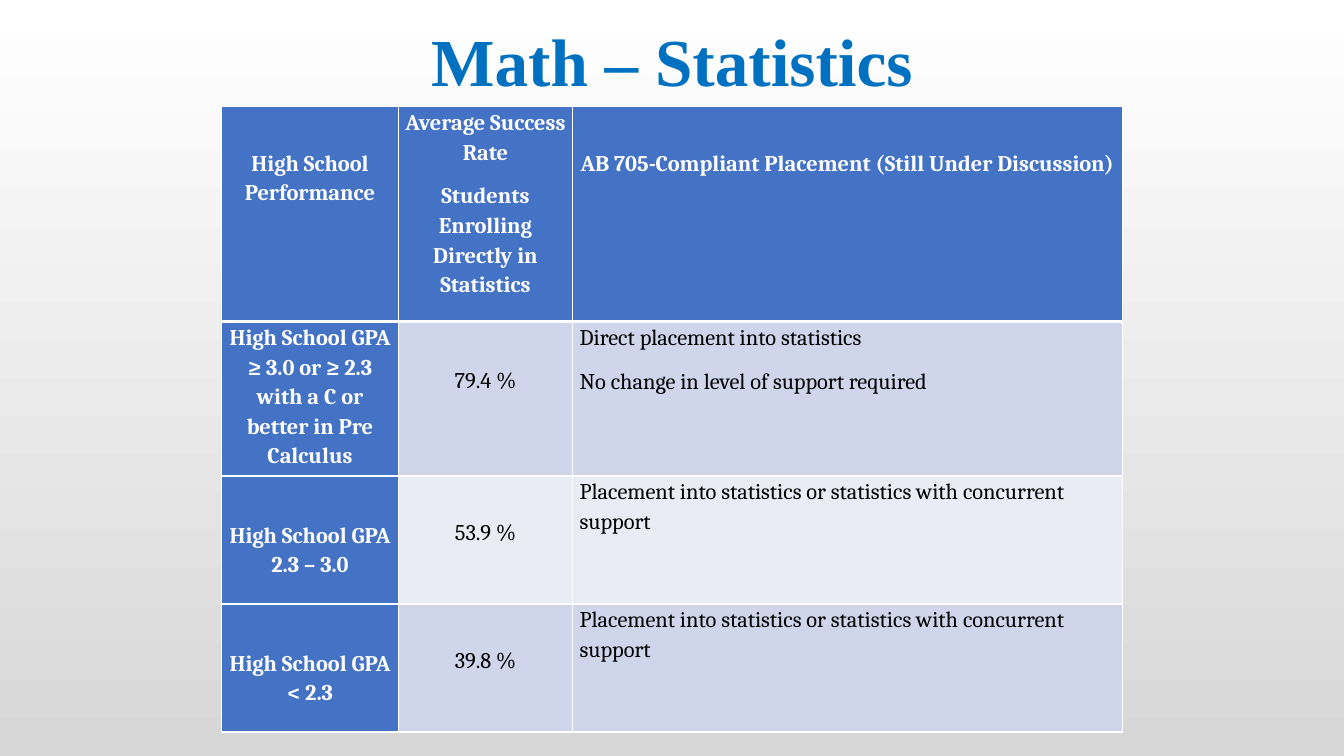
from lxml import etree
from pptx import Presentation
from pptx import util as u
from pptx.dml.color import RGBColor
from pptx.enum import text
from pptx.oxml.ns import qn

COLORS = {
    "white": "FFFFFF", "black": "000000", "gray": "D7D7D7",
    "title": "0070C0", "header": "4472C4",
    "band_dark": "CFD5EA", "band_light": "E9EBF5",
}
CENTER, LEFT = text.PP_ALIGN.CENTER, text.PP_ALIGN.LEFT


def rgb(name):
    return RGBColor.from_string(COLORS[name])


class SlideBuilder:
    """Holds the style and the current slide."""
    title_font, body_font = "Times New Roman", "Cambria"
    title_size, body_size = 48, 16

    def __init__(self, prs):
        self.s = prs.slides.add_slide(prs.slide_layouts[6])

    def background(self, top, bottom):
        fill = self.s.background.fill
        fill.gradient()
        fill.gradient_angle = 270
        for stop, color in zip(fill.gradient_stops, (top, bottom)):
            stop.color.rgb = rgb(color)

    def run(self, p, words, font, size, color, bold):
        r = p.add_run()
        r.text = words
        r.font.name, r.font.size, r.font.bold = font, u.Pt(size), bold
        r.font.color.rgb = rgb(color)

    def title(self, words, left, top, width, height):
        sp = self.s.shapes.add_textbox(*map(u.Inches, (left, top, width, height)))
        tf = sp.text_frame
        tf.word_wrap = True
        tf.vertical_anchor = text.MSO_ANCHOR.MIDDLE
        p = tf.paragraphs[0]
        p.alignment, p.line_spacing = CENTER, 0.9
        self.run(p, words, self.title_font, self.title_size, "title", True)

    def borders(self, cell, **widths):
        tcPr = cell._tc.get_or_add_tcPr()
        for side in "LRTB":
            ln = etree.SubElement(tcPr, qn(f"a:ln{side}"), w=str(u.Pt(widths.get(side, 1))))
            fill = etree.SubElement(ln, qn("a:solidFill"))
            etree.SubElement(fill, qn("a:srgbClr"), val=COLORS["white"])

    def cell(self, cell, lines, drop, fill, align, heading):
        cell.margin_left = cell.margin_right = u.Inches(0.07)
        cell.margin_top, cell.margin_bottom = u.Inches(drop), 0
        cell.fill.solid()
        cell.fill.fore_color.rgb = rgb(fill)
        tf = cell.text_frame
        for i, line in enumerate(lines):
            p = tf.add_paragraph() if i else tf.paragraphs[0]
            p.alignment, p.line_spacing, p.space_after = align, 1.15, u.Pt(10)
            self.run(p, line, self.body_font, self.body_size,
                     "white" if heading else "black", heading)

    def table(self, rows, left, top, widths, heights):
        size = (left, top, sum(widths), sum(heights))
        table = self.s.shapes.add_table(len(rows), len(widths), *map(u.Inches, size)).table
        for col, width in zip(table.columns, widths):
            col.width = u.Inches(width)
        for row, height in zip(table.rows, heights):
            row.height = u.Inches(height)
        for i, row in enumerate(rows):
            for j, (drop, *lines) in enumerate(row):
                heading = i == 0 or j == 0
                band = "band_dark" if i % 2 else "band_light"
                cell = table.cell(i, j)
                self.borders(cell, T=3 if i == 1 else 1, B=3 if i == 0 else 1)
                self.cell(cell, lines, drop, "header" if heading else band,
                          CENTER if heading or j == 1 else LEFT, heading)


# Each cell: distance of the text from the cell top, then its paragraphs
SUPPORT = (0, "Placement into statistics or statistics with concurrent support")
PLACEMENT = [
    [(0.4, "High School Performance"),
     (0, "Average Success Rate", "Students Enrolling Directly in Statistics"),
     (0.4, "AB 705-Compliant Placement (Still Under Discussion)")],
    [(0, "High School GPA ≥ 3.0 or ≥ 2.3 with a C or better in Pre Calculus"),
     (0.43, "79.4 %"),
     (0, "Direct placement into statistics", "No change in level of support required")],
    [(0.43, "High School GPA 2.3 – 3.0"), (0.4, "53.9 %"), SUPPORT],
    [(0.43, "High School GPA < 2.3"), (0.4, "39.8 %"), SUPPORT],
]


def main():
    prs = Presentation()
    prs.slide_width, prs.slide_height = u.Inches(13.33), u.Inches(7.5)
    slide = SlideBuilder(prs)
    slide.background("white", "gray")
    # Heading
    slide.title("Math – Statistics", 0.96, 0.23, 11.41, 0.82)
    # Placement table
    slide.table(PLACEMENT, 2.2, 1.06, (1.75, 1.73, 5.45), (2.13, 1.42, 1.27, 1.27))
    prs.save("out.pptx")


if __name__ == "__main__":
    main()
